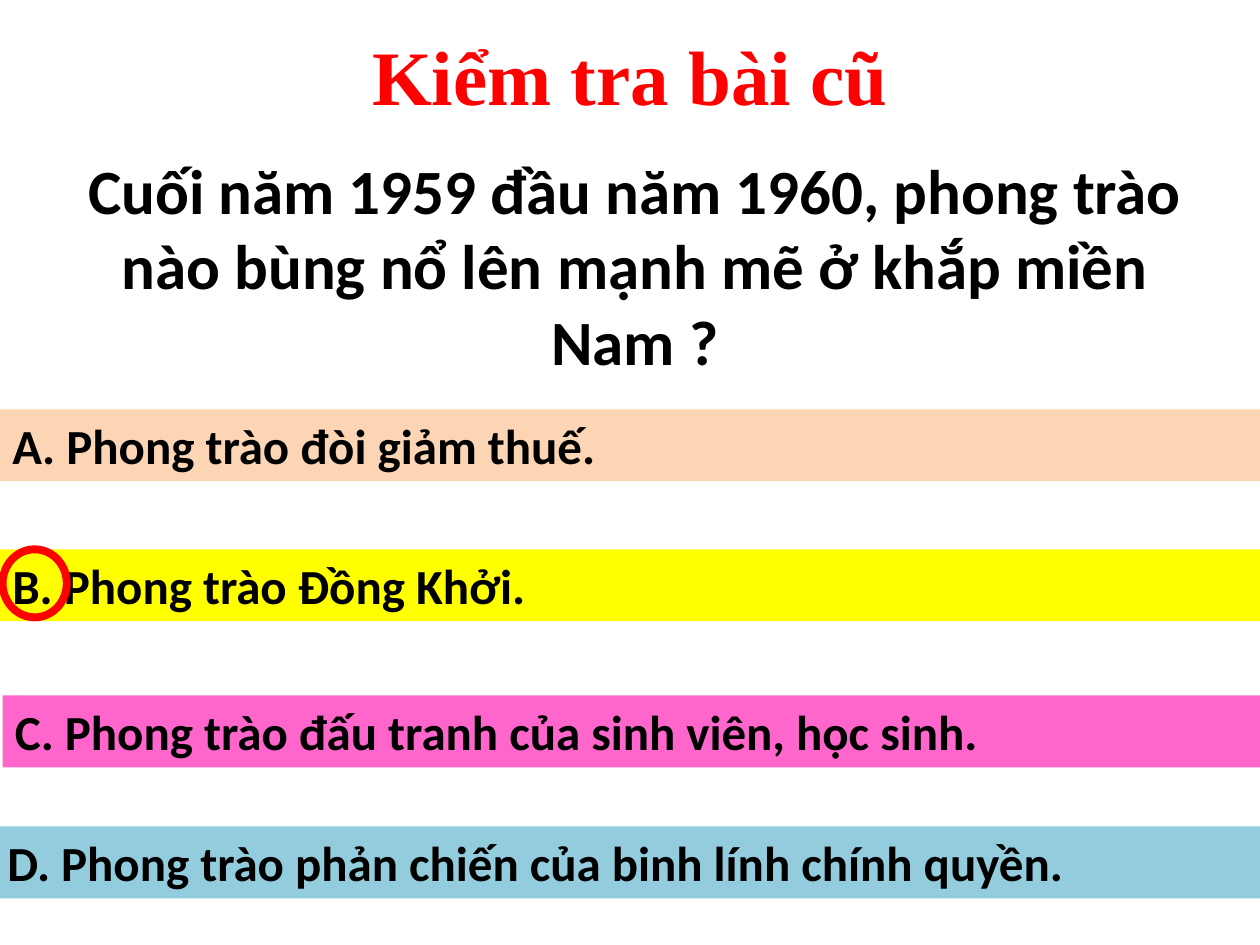
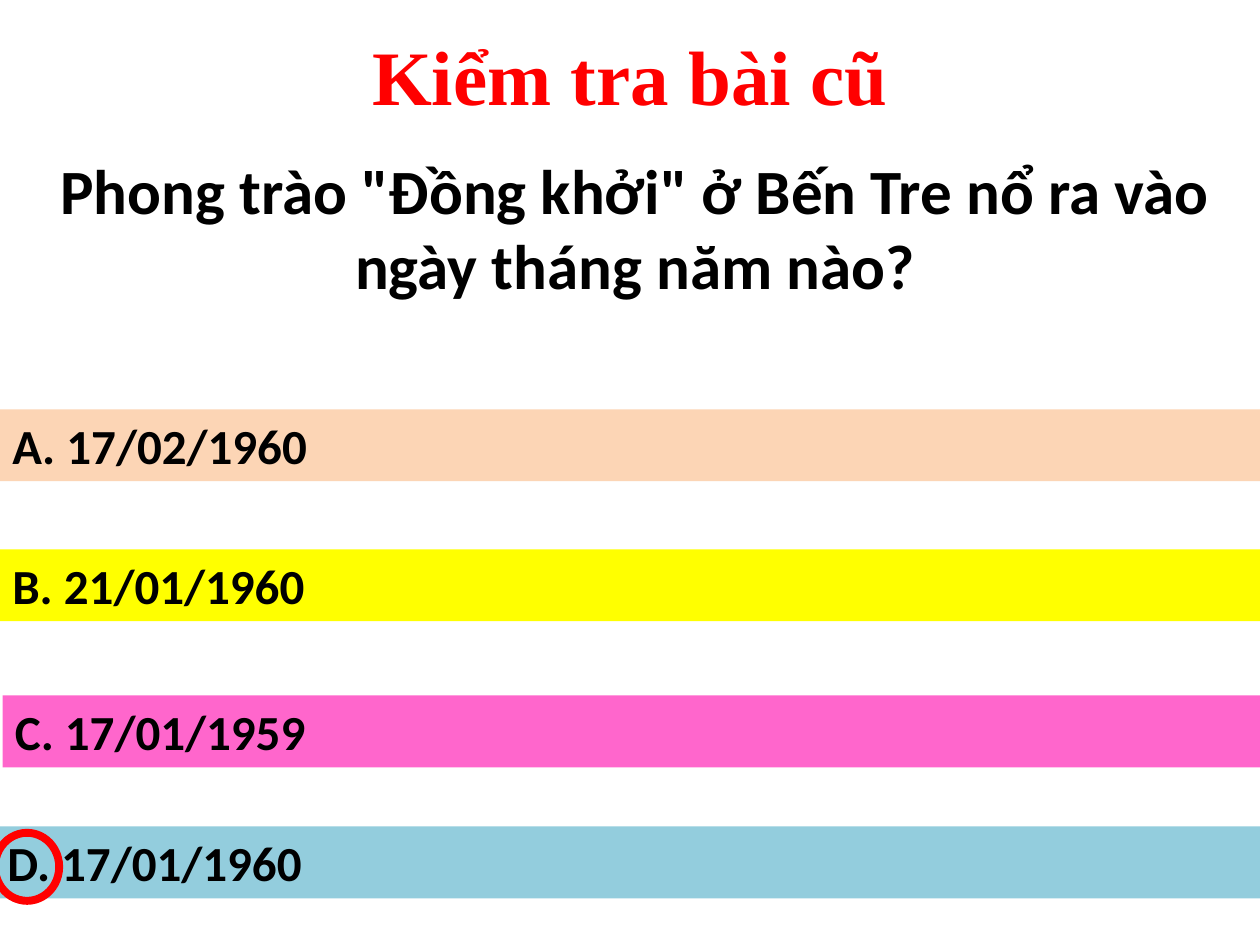
import pptx
import pptx.util
import pptx.dml.color
import pptx.enum.shapes
import pptx.enum.text
from dataclasses import dataclass

Inches = pptx.util.Inches
Align = pptx.enum.text.PP_ALIGN
Anchor = pptx.enum.text.MSO_ANCHOR
Shape = pptx.enum.shapes.MSO_SHAPE


@dataclass(frozen=True)
class Theme:
    red: str = "FF0000"
    ink: str = "000000"
    bands: tuple = ("FCD5B5", "FFFF00", "FF66CC", "93CDDD")
    head: str = "Times New Roman"
    body: str = "Calibri"
    title: int = 44
    ask: int = 36
    answer: int = 28
    ring: float = 4.5


# Left and top of each answer band; all end at the right edge
SPOTS = ((0, 3.25), (0, 4.36), (0.02, 5.52), (-0.04, 6.56))
WIDTH, HEIGHT, BAND = 10, 7.5, 0.57

TITLE = "Kiểm tra bài cũ"

# Question, answers, ring position
QUIZ = (
    ("Cuối năm 1959 đầu năm 1960, phong trào nào bùng nổ lên mạnh mẽ ở khắp miền Nam ?",
     ("Phong trào đòi giảm thuế.",
      "Phong trào Đồng Khởi.",
      "Phong trào đấu tranh của sinh viên, học sinh.",
      "Phong trào phản chiến của binh lính chính quyền."),
     (0.02, 4.36)),
    ('Phong trào "Đồng khởi" ở Bến Tre nổ ra vào ngày tháng năm nào?',
     ("17/02/1960", "21/01/1960", "17/01/1959", "17/01/1960"),
     (-0.04, 6.61)),
)


def color(code):
    return pptx.dml.color.RGBColor.from_string(code)


class Deck:
    def __init__(self, theme):
        self.theme = theme
        self.show = pptx.Presentation()
        self.show.slide_width = Inches(WIDTH)
        self.show.slide_height = Inches(HEIGHT)
        self.slide = None

    def page(self):
        self.slide = self.show.slides.add_slide(self.show.slide_layouts[6])

    def label(self, shape, text, size, face, tint, align, anchor):
        frame = shape.text_frame
        frame.word_wrap = True
        frame.vertical_anchor = anchor
        para = frame.paragraphs[0]
        para.text = text
        para.alignment = align
        font = para.font
        font.name, font.size, font.bold = face, pptx.util.Pt(size), True
        font.color.rgb = color(tint)

    def box(self, left, top, width, height):
        return self.slide.shapes.add_textbox(
            Inches(left), Inches(top), Inches(width), Inches(height))

    def form(self, kind, left, top, width, height):
        shape = self.slide.shapes.add_shape(
            kind, Inches(left), Inches(top), Inches(width), Inches(height))
        shape.shadow.inherit = False
        return shape

    def title(self, text):
        look = self.theme
        self.label(self.box(0.5, -0.03, 9, 1.25), text, look.title,
                   look.head, look.red, Align.CENTER, Anchor.MIDDLE)

    def ask(self, text):
        look = self.theme
        self.label(self.box(0.35, 1.15, 9.38, 1.51), text, look.ask,
                   look.body, look.ink, Align.CENTER, Anchor.TOP)

    def band(self, text, left, top, fill):
        look = self.theme
        shape = self.form(Shape.RECTANGLE, left, top, WIDTH - left, BAND)
        shape.fill.solid()
        shape.fill.fore_color.rgb = color(fill)
        shape.line.fill.background()
        self.label(shape, text, look.answer, look.body, look.ink,
                   Align.LEFT, Anchor.TOP)

    def ring(self, left, top):
        shape = self.form(Shape.OVAL, left, top, 0.51, 0.54)
        shape.fill.background()
        shape.line.color.rgb = color(self.theme.red)
        shape.line.width = pptx.util.Pt(self.theme.ring)


def main():
    deck = Deck(Theme())
    for question, answers, ring in QUIZ:
        deck.page()
        # Title and question
        deck.title(TITLE)
        deck.ask(question)
        # Answer bands
        for mark, answer, spot, fill in zip("ABCD", answers, SPOTS, deck.theme.bands):
            deck.band(f"{mark}. {answer}", *spot, fill)
        # Ring around the right answer
        deck.ring(*ring)
    deck.show.save("out.pptx")


if __name__ == "__main__":
    main()
